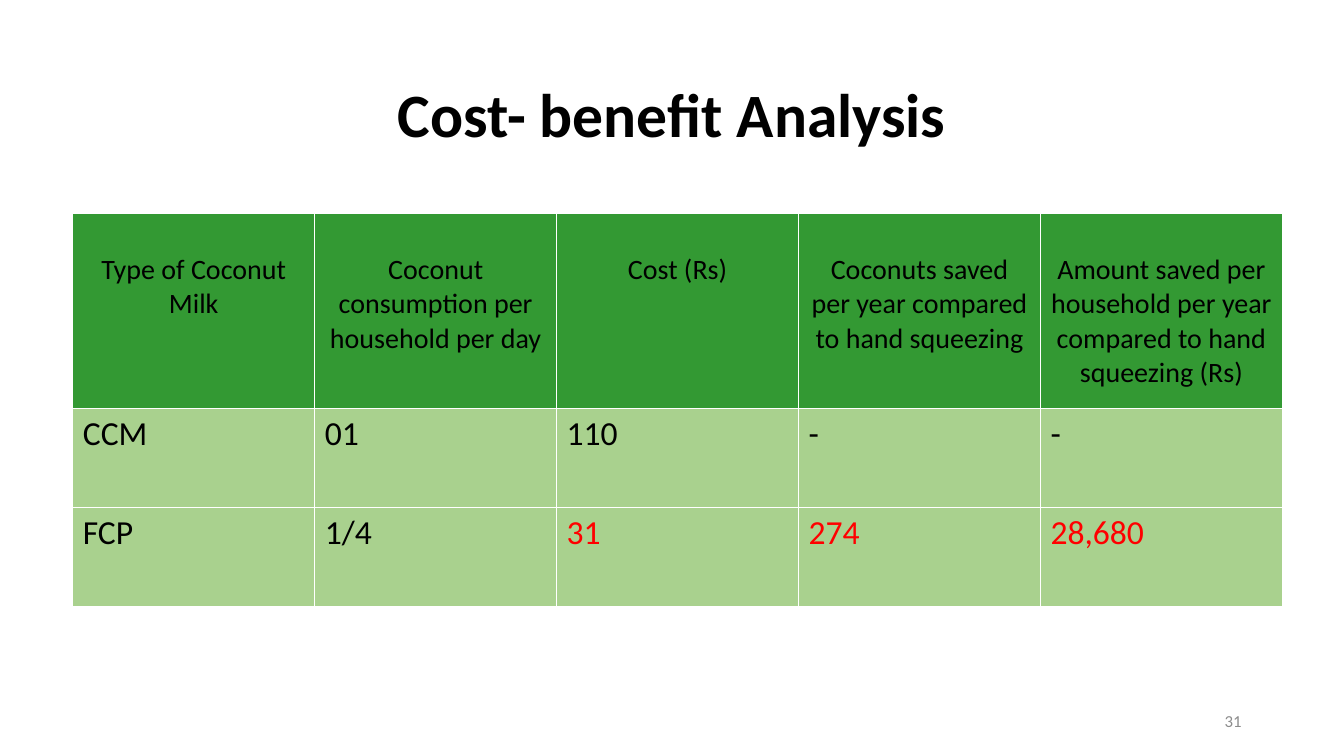
from dataclasses import dataclass

from lxml import etree
from pptx import Presentation
from pptx.dml.color import RGBColor
from pptx.enum.text import MSO_ANCHOR, PP_ALIGN
from pptx.oxml.ns import qn
from pptx.slide import Slide
from pptx.table import _Cell
from pptx.text.text import _Paragraph
from pptx.util import Pt

LEFT, CENTER, RIGHT = PP_ALIGN.LEFT, PP_ALIGN.CENTER, PP_ALIGN.RIGHT
MIDDLE = MSO_ANCHOR.MIDDLE

BLACK = RGBColor(0x00, 0x00, 0x00)
WHITE = RGBColor(0xFF, 0xFF, 0xFF)
GRAY = RGBColor(0x8C, 0x8C, 0x8C)
RED = RGBColor(0xFF, 0x00, 0x00)
GREEN = RGBColor(0x33, 0x99, 0x33)
PALE = RGBColor(0xA9, 0xD1, 0x8E)
FONT = "Calibri"


@dataclass
class Style:
    size: float
    color: RGBColor = BLACK
    align: PP_ALIGN = LEFT
    bold: bool = False


@dataclass
class Label:
    text: str
    left: float
    top: float
    width: float
    height: float
    style: Style


@dataclass
class Row:
    texts: list[str]
    height: float
    fill: RGBColor
    styles: list[Style]
    pad: float = 3.6  # space above the text


HEAD = Style(20, align=CENTER)
BODY = Style(24)
SAVED = Style(24, RED)

LABELS = [
    Label("Cost- benefit Analysis", 66, 28.75, 828, 104.4,
          Style(44, align=CENTER, bold=True)),
    Label("31", 678, 500.5, 216, 28.75, Style(12, GRAY, RIGHT)),
]

ROWS = [
    Row(["Type of Coconut Milk",
         "Coconut consumption per household per day",
         "Cost (Rs)",
         "Coconuts saved per year compared to hand squeezing",
         "Amount saved per household per year compared to hand squeezing (Rs)"],
        139, GREEN, [HEAD] * 5, pad=28),
    Row(["CCM", "01", "110", "-", "-"], 70.7, PALE, [BODY] * 5),
    Row(["FCP", "1/4", "31", "274", "28,680"], 70.7, PALE,
        [BODY] * 2 + [SAVED] * 3),
]
COL = 172.8


def write(para: _Paragraph, text: str, style: Style) -> None:
    para.alignment = style.align
    run = para.add_run()
    run.text = text
    font = run.font
    font.name, font.size, font.bold = FONT, Pt(style.size), style.bold
    font.color.rgb = style.color


def add_label(slide: Slide, label: Label) -> None:
    box = slide.shapes.add_textbox(Pt(label.left), Pt(label.top),
                                   Pt(label.width), Pt(label.height))
    frame = box.text_frame
    frame.word_wrap = True
    frame.vertical_anchor = MIDDLE
    write(frame.paragraphs[0], label.text, label.style)


def add_edges(cell: _Cell) -> None:
    props = cell._tc.get_or_add_tcPr()
    for side in ("lnL", "lnR", "lnT", "lnB"):
        line = etree.SubElement(props, qn(f"a:{side}"), w=str(Pt(1)))
        fill = etree.SubElement(line, qn("a:solidFill"))
        etree.SubElement(fill, qn("a:srgbClr"), val=str(WHITE))


def add_grid(slide: Slide, rows: list[Row]) -> None:
    count = len(rows[0].texts)
    total = sum(row.height for row in rows)
    table = slide.shapes.add_table(len(rows), count, Pt(52), Pt(152.7),
                                   Pt(COL * count), Pt(total)).table
    for col in table.columns:
        col.width = Pt(COL)
    for y, row in enumerate(rows):
        table.rows[y].height = Pt(row.height)
        for x, (text, style) in enumerate(zip(row.texts, row.styles)):
            cell = table.cell(y, x)
            add_edges(cell)
            cell.fill.solid()
            cell.fill.fore_color.rgb = row.fill
            cell.margin_top = Pt(row.pad)
            write(cell.text_frame.paragraphs[0], text, style)


def main() -> None:
    deck = Presentation()
    deck.slide_width, deck.slide_height = Pt(960), Pt(540)
    slide = deck.slides.add_slide(deck.slide_layouts[6])

    # Title and page number
    for label in LABELS:
        add_label(slide, label)

    # Cost table
    add_grid(slide, ROWS)

    deck.save("out.pptx")


if __name__ == "__main__":
    main()
